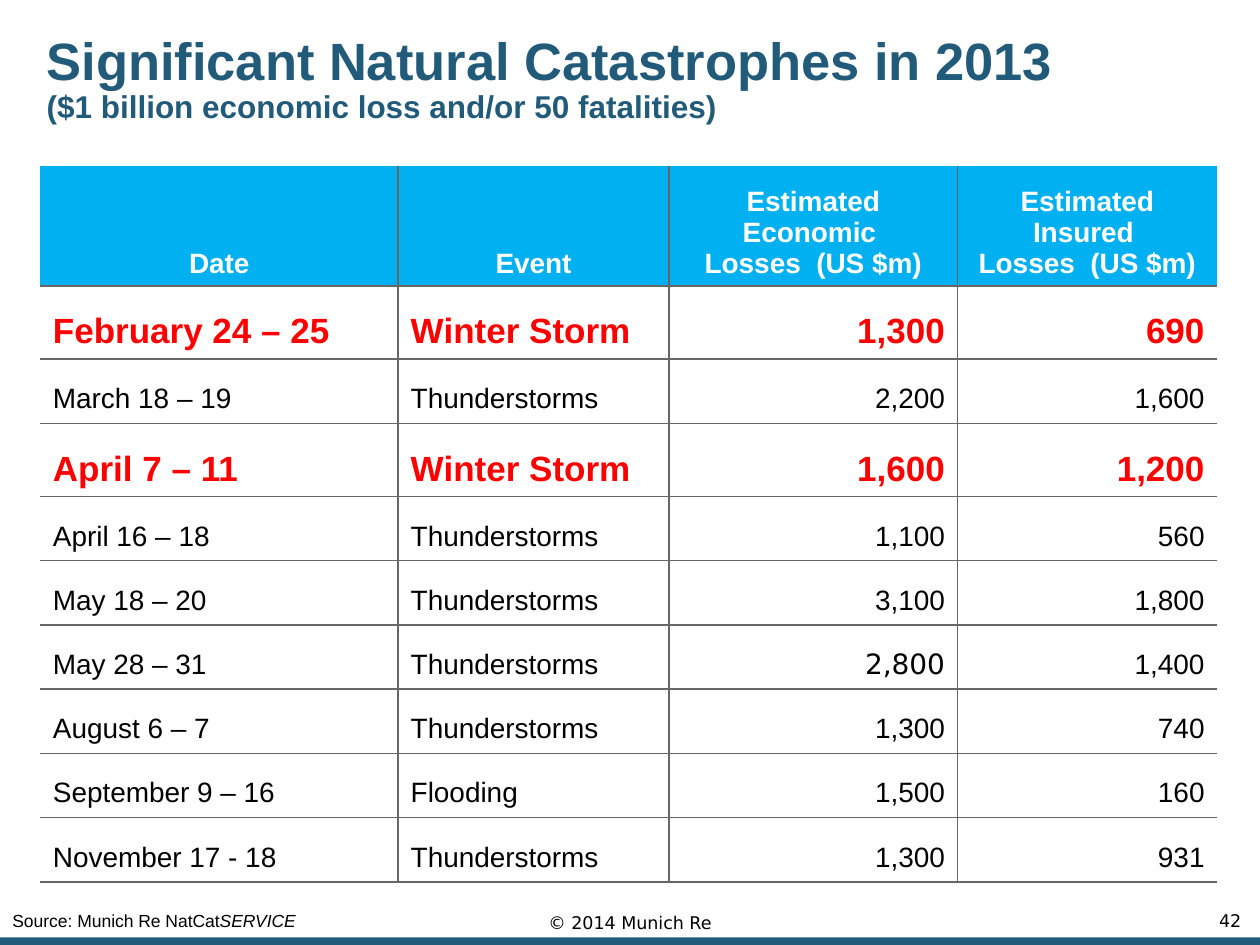
from lxml import etree
from pptx import Presentation
from pptx.dml.color import RGBColor
from pptx.enum.shapes import MSO_SHAPE
from pptx.enum.text import MSO_ANCHOR, MSO_AUTO_SIZE, PP_ALIGN
from pptx.oxml.ns import qn
from pptx.util import Inches, Pt

LEFT, CENTER, RIGHT = PP_ALIGN.LEFT, PP_ALIGN.CENTER, PP_ALIGN.RIGHT
MIDDLE, BOTTOM = MSO_ANCHOR.MIDDLE, MSO_ANCHOR.BOTTOM
NO_FIT = MSO_AUTO_SIZE.NONE
RECTANGLE = MSO_SHAPE.RECTANGLE

NAVY, SKY, GRID = "225A7A", "00B0F0", "666666"
WHITE, BLACK, RED = "FFFFFF", "000000", "FF0000"
SANS, FOOTER_FONT = "Arial", "DejaVu Sans"

COLUMN_WIDTHS = [2.84, 2.15, 2.29, 2.06]
HEADERS = ["Date", "Event", "Estimated Economic \vLosses  (US $m)",
           "Estimated Insured \vLosses  (US $m)"]
EVENTS = [
    ("February 24 – 25", "Winter Storm", "1,300", "690"),
    ("March 18 – 19", "Thunderstorms", "2,200", "1,600"),
    ("April 7 – 11", "Winter Storm", "1,600", "1,200"),
    ("April 16 – 18", "Thunderstorms", "1,100", "560"),
    ("May 18 – 20", "Thunderstorms", "3,100", "1,800"),
    ("May 28 – 31", "Thunderstorms", "2,800", "1,400"),
    ("August 6 – 7", "Thunderstorms", "1,300", "740"),
    ("September 9 – 16", "Flooding", "1,500", "160"),
    ("November 17 - 18", "Thunderstorms", "1,300", "931"),
]
HEADER_STYLE = dict(size=16, bold=True, color=WHITE)
STORM_STYLE = dict(size=20, bold=True, color=RED)
EVENT_STYLE = dict(size=16, bold=False, color=BLACK)


def rgb(color):
    return RGBColor.from_string(color)


def format_font(font, color, size, name=SANS, bold=False, italic=False):
    values = dict(name=name, size=Pt(size), bold=bold, italic=italic)
    for key, value in values.items():
        setattr(font, key, value)
    font.color.rgb = rgb(color)


def add_run(p, text, **style):
    r = p.add_run()
    r.text = text
    format_font(r.font, **style)


def add_title(s, box, title, subtitle):
    sp = s.shapes.title
    sp.left, sp.top, sp.width, sp.height = [Inches(v) for v in box]
    tf = sp.text_frame
    values = dict(word_wrap=True, auto_size=NO_FIT, vertical_anchor=MIDDLE)
    for side in ("left", "top", "right", "bottom"):
        values[f"margin_{side}"] = Inches(0.05)
    for key, value in values.items():
        setattr(tf, key, value)
    p = tf.paragraphs[0]
    p.alignment, p.line_spacing = LEFT, 0.9
    add_run(p, title, color=NAVY, size=30, bold=True)
    p.add_line_break()
    add_run(p, subtitle, color=NAVY, size=18, bold=True)


def set_borders(cell, visible):
    """Draw the sides named in visible and clear the others."""
    tcPr = cell._tc.get_or_add_tcPr()
    for side in "LRTB":
        ln = etree.SubElement(tcPr, qn(f"a:ln{side}"), w=str(Pt(1)))
        if side in visible:
            fill = etree.SubElement(ln, qn("a:solidFill"))
            etree.SubElement(fill, qn("a:srgbClr"), val=GRID)
        else:
            etree.SubElement(ln, qn("a:noFill"))


def fill_cell(cell, text, fill, anchor, align, spacing, borders, style):
    set_borders(cell, borders)
    cell.fill.solid()
    cell.fill.fore_color.rgb = rgb(fill)
    cell.vertical_anchor = anchor
    cell.margin_left = cell.margin_right = cell.margin_top = Inches(0.1)
    cell.margin_bottom = Inches(0.05)
    p = cell.text_frame.paragraphs[0]
    p.text = text
    p.alignment, p.line_spacing = align, spacing
    for r in p.runs:
        format_font(r.font, **style)


def add_losses_table(s, box):
    rows = [HEADERS] + EVENTS
    frame = s.shapes.add_table(len(rows), len(HEADERS), *[Inches(v) for v in box])
    table = frame.table
    table.horz_banding = False
    for column, width in zip(table.columns, COLUMN_WIDTHS):
        column.width = Inches(width)
    for i, row in enumerate(rows):
        header, storm = i == 0, row[1] == "Winter Storm"
        style = HEADER_STYLE if header else STORM_STYLE if storm else EVENT_STYLE
        table.rows[i].height = Inches(0.95 if header else 0.58 if storm else 0.51)
        for j, text in enumerate(row):
            # Inner lines and the bottom edge only
            borders = "B" + "T" * (i > 0) + "L" * (j > 0) + "R" * (j < len(row) - 1)
            font = FOOTER_FONT if text == "2,800" else SANS
            fill_cell(table.cell(i, j), text,
                      fill=SKY if header else WHITE,
                      anchor=BOTTOM if header else MIDDLE,
                      align=CENTER if header else RIGHT if j > 1 else LEFT,
                      spacing=1.0 if header else 1.3,
                      borders=borders, style=dict(style, name=font))


def add_label(s, box, runs, align, spacing=1.0):
    tf = s.shapes.add_textbox(*[Inches(v) for v in box]).text_frame
    tf.word_wrap, tf.vertical_anchor = True, MIDDLE
    p = tf.paragraphs[0]
    p.alignment, p.line_spacing = align, spacing
    for text, style in runs:
        add_run(p, text, color=BLACK, size=10, **style)


def add_footer(s, box):
    left, top, width, height = box
    # Source, page number and copyright
    add_label(s, (left, top, 3.17, 0.27),
              [("Source: Munich Re NatCat", {}), ("SERVICE", dict(italic=True))], LEFT)
    add_label(s, (left + width - 0.8, top, 0.75, 0.27),
              [("42", dict(name=FOOTER_FONT))], RIGHT)
    add_label(s, (left + (width - 4.17) / 2, top - 0.03, 4.17, 0.32),
              [("© 2014 Munich Re", dict(name=FOOTER_FONT))], CENTER, 1.3)
    # Bottom bar
    bar = s.shapes.add_shape(RECTANGLE, Inches(left), Inches(top + height - 0.06),
                             Inches(width), Inches(0.06))
    bar.shadow.inherit = False
    bar.fill.solid()
    bar.fill.fore_color.rgb = rgb(NAVY)
    bar.line.fill.background()


def main():
    prs = Presentation()
    prs.slide_width, prs.slide_height = Inches(10), Inches(7.5)
    s = prs.slides.add_slide(prs.slide_layouts[5])
    add_title(s, (0.32, 0.19, 8.16, 0.89), "Significant Natural Catastrophes in 2013",
              "($1 billion economic loss and/or 50 fatalities)")
    add_losses_table(s, (0.32, 1.32, 9.34, 5.65))
    add_footer(s, (0, 7.17, 10, 0.33))
    prs.save("out.pptx")


if __name__ == "__main__":
    main()
